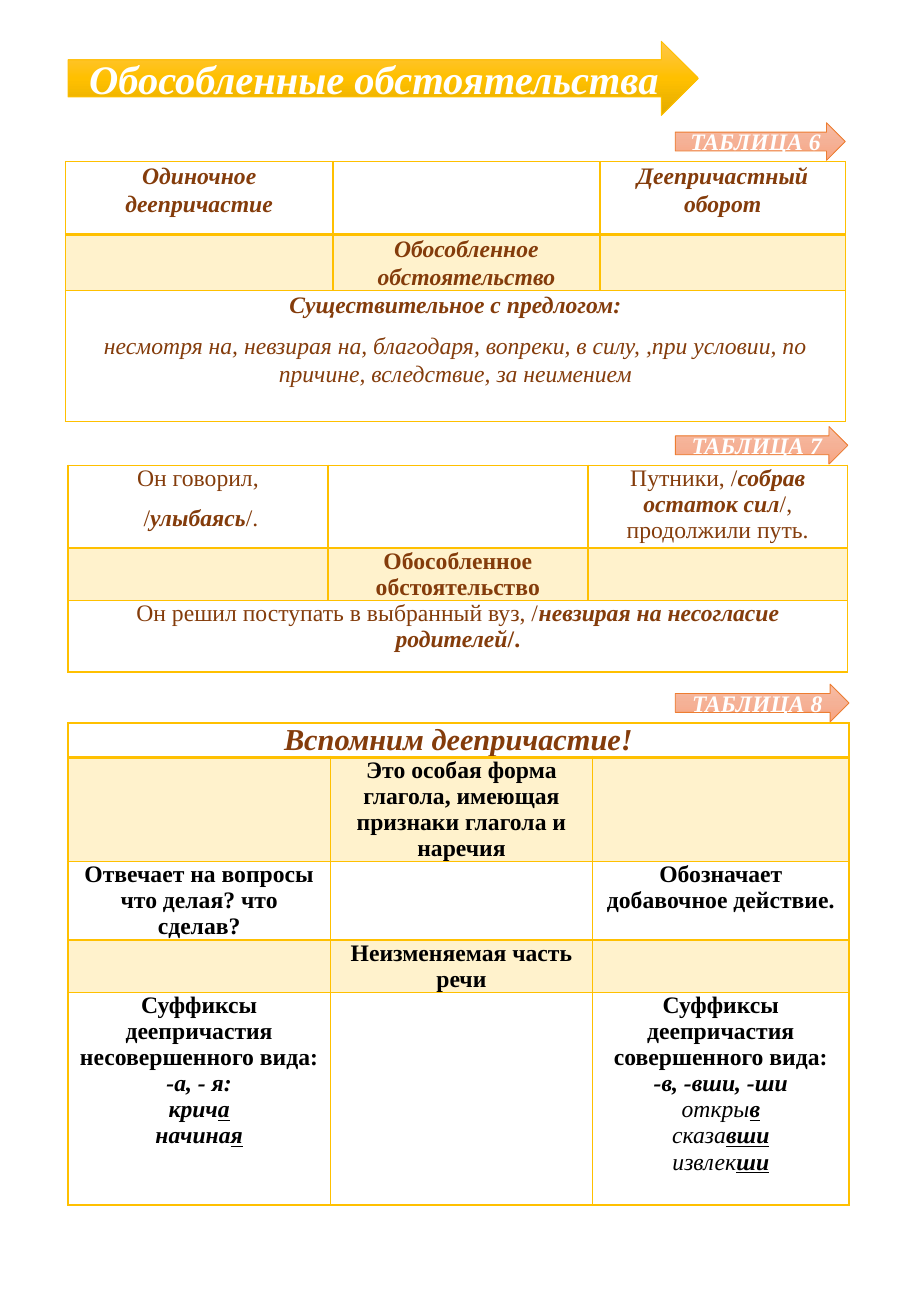
"""Build the study sheet on detached adverbial modifiers."""
from copy import deepcopy

from lxml import etree
from pptx import Presentation
from pptx.dml.color import RGBColor
from pptx.enum.shapes import MSO_SHAPE as Shape
from pptx.enum.text import MSO_ANCHOR as Anchor, PP_ALIGN as Align
from pptx.oxml.ns import qn
from pptx.util import Inches, Pt

COLORS = {"gold": "FFC000", "orange": "ED7D31", "brown": "843C0B",
          "black": "000000", "white": "FFFFFF"}
TITLE_GRADIENT = ("FFC64B", "FFC000", "E3AB00")
LABEL_GRADIENT = ("F7BDA5", "F5B196", "F8A582")
FONT = "Times New Roman"
TITLE = "Обособленные обстоятельства"
LABEL_LEFT, LABEL_HEIGHT, LABEL_RISE = 5.56, 0.31, 0.32

# A cell lists paragraphs, a paragraph lists (text, style) runs; b, i, u are styles.
TABLES = [
    {"label": "ТАБЛИЦА 6", "at": (0.54, 1.33), "columns": (2.2, 2.2, 2.02),
     "heights": (0.6, 0.46, 1.08), "color": "brown", "spacing": 1.07, "after": 8,
     "shaded": (1,), "merged": (2,),
     "rows": [
         [[[("Одиночное деепричастие", "bi")]], [],
          [[("Деепричастный оборот", "bi")]]],
         [[], [[("Обособленное обстоятельство", "bi")]], []],
         [[[("Существительное с предлогом:", "bi")],
           [("несмотря на, невзирая на, благодаря, вопреки, в силу, ,при условии, "
             "по причине, вследствие, за неимением", "i")]], [], []],
     ]},
    {"label": "ТАБЛИЦА 7", "at": (0.56, 3.83), "columns": (2.14, 2.14, 2.14),
     "heights": (0.68, 0.43, 0.59), "color": "brown", "spacing": None, "after": 8,
     "shaded": (1,), "merged": (2,),
     "rows": [
         [[[("Он говорил,", "")], [(" /", ""), ("улыбаясь", "bi"), ("/.", "")]], [],
          [[("Путники, /", ""), ("собрав остаток сил", "bi"),
            ("/, продолжили путь.", "")]]],
         [[], [[("Обособленное обстоятельство", "b")]], []],
         [[[("Он решил поступать в выбранный вуз, /", ""),
            ("невзирая на несогласие родителей", "bi"), ("/.", "b")]], [], []],
     ]},
    {"label": "ТАБЛИЦА 8", "at": (0.56, 5.95), "columns": (2.16, 2.16, 2.11),
     "heights": (0.28, 0.86, 0.64, 0.43, 1.75), "color": "black", "spacing": None,
     "after": 0, "shaded": (1, 3), "merged": (0,),
     "rows": [
         [[[("Вспомним деепричастие!", "bi")]], [], []],
         [[], [[("Это особая форма глагола, имеющая признаки глагола и наречия",
                 "b")]], []],
         [[[("Отвечает на вопросы что делая? что сделав?", "b")]], [],
          [[("Обозначает добавочное действие.", "b")]]],
         [[], [[("Неизменяемая часть речи", "b")]], []],
         [[[("Суффиксы деепричастия несовершенного вида:", "b")],
           [("-а, - я:", "bi")],
           [("крич", "bi"), ("а", "biu")],
           [("начина", "bi"), ("я", "biu")]], [],
          [[("Суффиксы деепричастия совершенного вида:", "b")],
           [("-в, -вши, -ши", "bi")],
           [("откры", "i"), ("в", "biu")],
           [("сказа", "i"), ("вши", "biu")],
           [("извлек", "i"), ("ши", "biu")]]],
     ]},
]


def rgb(name):
    return RGBColor.from_string(COLORS[name])


def style_para(para, size, color):
    para.alignment = Align.CENTER
    para.font.name, para.font.size = FONT, Pt(size)
    para.font.color.rgb = rgb(color)


def add_arrow(page, text, place, size, gradient, line):
    arrow = page.shapes.add_shape(Shape.RIGHT_ARROW, *map(Inches, place))
    arrow.shadow.inherit = False
    arrow.fill.gradient()
    arrow.fill.gradient_angle = 270
    stop_list = next(arrow._element.spPr.iter(qn("a:gsLst")))
    stop_list.append(deepcopy(stop_list[0]))
    for index, (stop, shade) in enumerate(zip(arrow.fill.gradient_stops, gradient)):
        stop.position = index / 2
        stop.color.rgb = RGBColor.from_string(shade)
    arrow.line.color.rgb, arrow.line.width = rgb(line), Pt(0.5)
    arrow.text_frame.vertical_anchor = Anchor.MIDDLE
    para = arrow.text_frame.paragraphs[0]
    para.add_run().text = text
    style_para(para, size, "white")
    para.font.bold = para.font.italic = True


def fill_cell(cell, shaded):
    if not shaded:
        cell.fill.background()
        return
    cell.fill.solid()
    cell.fill.fore_color.rgb = rgb("gold")
    color = next(cell._tc.tcPr.iter(qn("a:srgbClr")))
    etree.SubElement(color, qn("a:alpha"), val="20000")


def border_cell(cell, row):
    widths = {"L": 1, "R": 1, "T": 2 if row == 1 else 1, "B": 2 if row == 0 else 1}
    for index, (side, width) in enumerate(widths.items()):
        line = etree.Element(qn(f"a:ln{side}"), w=str(Pt(width)))
        solid = etree.SubElement(line, qn("a:solidFill"))
        etree.SubElement(solid, qn("a:srgbClr"), val=COLORS["gold"])
        cell._tc.get_or_add_tcPr().insert(index, line)


def write_cell(cell, paragraphs, size, color, spacing, after):
    cell.margin_left = cell.margin_right = Inches(0.07)
    cell.margin_top = cell.margin_bottom = 0
    frame = cell.text_frame
    for index, runs in enumerate(paragraphs):
        para = frame.add_paragraph() if index else frame.paragraphs[0]
        style_para(para, size, color)
        para.space_after = Pt(after)
        if spacing:
            para.line_spacing = spacing
        for text, style in runs:
            span = para.add_run()
            span.text = text
            span.font.bold, span.font.italic = "b" in style, "i" in style
            span.font.underline = "u" in style


def add_grid(page, data):
    columns, heights = data["columns"], data["heights"]
    left, top = data["at"]
    box = (left, top, sum(columns), sum(heights))
    grid = page.shapes.add_table(len(heights), len(columns), *map(Inches, box)).table
    grid.first_row = grid.horz_banding = False
    for column, width in zip(grid.columns, columns):
        column.width = Inches(width)
    for row, (height, cells) in enumerate(zip(heights, data["rows"])):
        grid.rows[row].height = Inches(height)
        heading = row == 0 and row in data["merged"]
        size, color = (18, "brown") if heading else (14, data["color"])
        for column, paragraphs in enumerate(cells):
            cell = grid.cell(row, column)
            write_cell(cell, paragraphs, size, color, data["spacing"], data["after"])
            fill_cell(cell, row in data["shaded"])
            border_cell(cell, row)
        if row in data["merged"]:
            grid.cell(row, 0).merge(grid.cell(row, len(columns) - 1))


def main():
    deck = Presentation()
    deck.slide_width, deck.slide_height = Inches(7.5), Inches(10.83)
    page = deck.slides.add_slide(deck.slide_layouts[6])
    add_arrow(page, TITLE, (0.56, 0.34, 5.19, 0.61), 24, TITLE_GRADIENT, "gold")
    for data in TABLES:
        left, top = data["at"]
        width = left + sum(data["columns"]) - LABEL_LEFT
        place = (LABEL_LEFT, top - LABEL_RISE, width, LABEL_HEIGHT)
        add_arrow(page, data["label"], place, 14, LABEL_GRADIENT, "orange")
        add_grid(page, data)
    deck.save("out.pptx")


if __name__ == "__main__":
    main()
